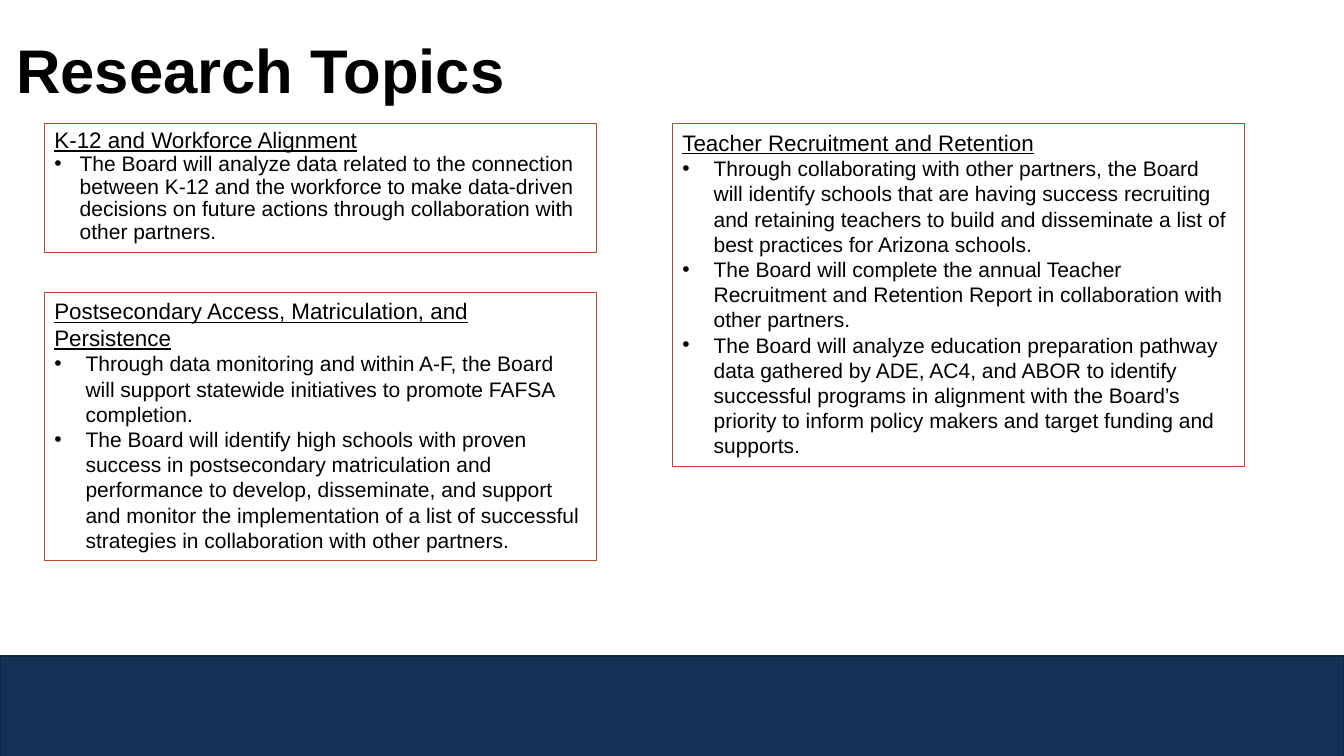
from lxml.etree import SubElement
from pptx import Presentation
from pptx.dml.color import RGBColor
from pptx.enum.shapes import MSO_SHAPE
from pptx.enum.text import MSO_ANCHOR, MSO_AUTO_SIZE, PP_ALIGN
from pptx.oxml.ns import qn
from pptx.util import Inches, Pt

NAVY = RGBColor(0x15, 0x31, 0x56)
EDGE = RGBColor(0x10, 0x24, 0x40)
RUST = RGBColor(0xBD, 0x46, 0x2A)
BLACK = RGBColor(0, 0, 0)

LEFT, RIGHT = 0.44, 6.67
TOP, LOW = 1.23, 2.9
WIDE = 5.48

# Each topic: box, line spacing, space above head, indent, head, points
TOPICS = [
    ((LEFT, TOP, WIDE, 1.28), 0.9, 10, 0.25, "K-12 and Workforce Alignment", [
        "The Board will analyze data related to the connection between K-12 and the "
        "workforce to make data-driven decisions on future actions through "
        "collaboration with other partners."]),
    ((LEFT, LOW, WIDE, 2.66), 1.0, 0, 0.31,
     "Postsecondary Access, Matriculation, and Persistence", [
        "Through data monitoring and within A-F, the Board will support statewide "
        "initiatives to promote FAFSA completion.",
        "The Board will identify high schools with proven success in postsecondary "
        "matriculation and performance to develop, disseminate, and support and "
        "monitor the implementation of a list of successful strategies in "
        "collaboration with other partners."]),
    ((RIGHT, TOP, 5.67, 3.4), 1.0, 0, 0.31, "Teacher Recruitment and Retention", [
        "Through collaborating with other partners, the Board will identify schools "
        "that are having success recruiting and retaining teachers to build and "
        "disseminate a list of best practices for Arizona schools.",
        "The Board will complete the annual Teacher Recruitment and Retention Report "
        "in collaboration with other partners.",
        "The Board will analyze education preparation pathway data gathered by ADE, "
        "AC4, and ABOR to identify successful programs in alignment with the Board’s "
        "priority to inform policy makers and target funding and supports."]),
]


def place(shape, box):
    shape.left, shape.top, shape.width, shape.height = map(Inches, box)


def write(para, text, look, gaps, indent=0):
    """Fill a paragraph; an indent above zero gives it a bullet."""
    run = para.add_run()
    run.text = text
    run.font.name = "Arial"
    run.font.color.rgb = BLACK
    for key, value in look.items():
        setattr(run.font, key, value)
    for key, value in gaps.items():
        setattr(para, key, value)
    props = para._p.get_or_add_pPr()
    props.set("marL", str(Inches(indent)))
    props.set("indent", str(-Inches(indent)))
    if indent:
        SubElement(props, qn("a:buFont")).set("typeface", "Arial")
        SubElement(props, qn("a:buChar")).set("char", "•")
    else:
        SubElement(props, qn("a:buNone"))


deck = Presentation()
deck.slide_width, deck.slide_height = Inches(13.33), Inches(7.5)
slide = deck.slides.add_slide(deck.slide_layouts[1])
title, body = slide.placeholders

# Band along the foot, behind everything else
band = slide.shapes.add_shape(MSO_SHAPE.RECTANGLE, 0, Inches(6.51),
                              deck.slide_width, Inches(1))
band.shadow.inherit = False
band.fill.solid()
band.fill.fore_color.rgb = NAVY
band.line.color.rgb = EDGE
band.line.width = Pt(1)
title._element.addprevious(band._element)

place(title, (0.06, 0, 11.5, 1.45))
title.text_frame.vertical_anchor = MSO_ANCHOR.MIDDLE
title.text_frame.auto_size = MSO_AUTO_SIZE.NONE
write(title.text_frame.paragraphs[0], "Research Topics",
      {"size": Pt(44), "bold": True},
      {"alignment": PP_ALIGN.LEFT, "line_spacing": 0.9})

for box, pitch, above, indent, head, points in TOPICS:
    first = head == TOPICS[0][4]
    shape = body if first else slide.shapes.add_textbox(0, 0, 0, 0)
    place(shape, box)
    shape.line.color.rgb = RUST
    shape.line.width = Pt(0.75)
    frame = shape.text_frame
    frame.word_wrap = True
    frame.auto_size = MSO_AUTO_SIZE.NONE if first else MSO_AUTO_SIZE.SHAPE_TO_FIT_TEXT
    gaps = {"line_spacing": pitch, "space_before": Pt(above), "space_after": Pt(0)}
    write(frame.paragraphs[0], head, {"size": Pt(16), "underline": True}, gaps)
    gaps["space_before"] = Pt(0)
    for point in points:
        write(frame.add_paragraph(), point, {"size": Pt(15)}, gaps, indent)

deck.save("out.pptx")
